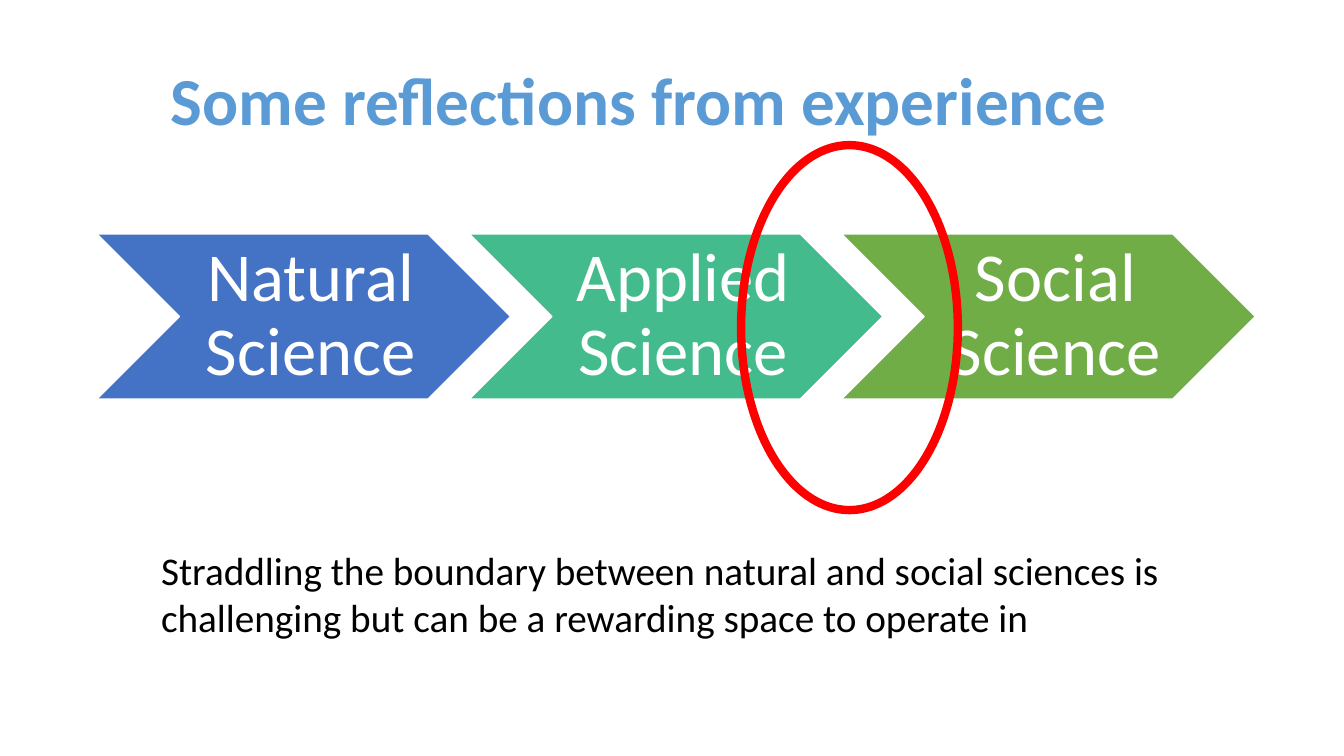
import pptx
import pptx.dml.color
import pptx.enum.shapes
import pptx.enum.text
import pptx.util

Inches = pptx.util.Inches
Pt = pptx.util.Pt
SHAPE = pptx.enum.shapes.MSO_SHAPE
ANCHOR = pptx.enum.text.MSO_ANCHOR
ALIGN = pptx.enum.text.PP_ALIGN

SCIENCES = [
    ("Natural Science", "4472C4"),
    ("Applied Science", "43BB8D"),
    ("Social Science", "70AD47"),
]


def color(value):
    return pptx.dml.color.RGBColor.from_string(value)


def add_text(slide, box, text, size, fill, bold=False, align=ALIGN.LEFT,
             anchor=ANCHOR.TOP, spacing=1.0, insets=(0.1, 0.05, 0.1, 0.05)):
    frame = slide.shapes.add_textbox(*map(Inches, box)).text_frame
    frame.word_wrap = True
    frame.vertical_anchor = anchor
    (frame.margin_left, frame.margin_top,
     frame.margin_right, frame.margin_bottom) = map(Inches, insets)
    frame.text = text
    paragraph = frame.paragraphs[0]
    paragraph.alignment = align
    paragraph.line_spacing = spacing
    font = paragraph.runs[0].font
    font.name = "Calibri"
    font.size = Pt(size)
    font.bold = bold
    font.color.rgb = color(fill)


def add_outlined(slide, kind, box, line, width, fill=None):
    outlined = slide.shapes.add_shape(kind, *map(Inches, box))
    outlined.shadow.inherit = False
    if fill:
        outlined.fill.solid()
        outlined.fill.fore_color.rgb = color(fill)
    else:
        outlined.fill.background()
    outlined.line.color.rgb = color(line)
    outlined.line.width = Pt(width)


def add_title(slide, box):
    add_text(slide, box, "Some reflections from experience", 48, "5B9BD5",
             bold=True, align=ALIGN.CENTER, anchor=ANCHOR.BOTTOM, spacing=0.9)


def add_science_chain(slide, box):
    left, top, width, height = box
    # Neighbouring chevrons overlap by a tenth of their width
    chevron_width = width / (1 + 0.9 * (len(SCIENCES) - 1))
    for index, (science, fill) in enumerate(SCIENCES):
        x = left + index * 0.9 * chevron_width
        add_outlined(slide, SHAPE.CHEVRON, (x, top, chevron_width, height),
                     "FFFFFF", 1, fill)
        # The label sits between the notch and the point
        label_box = (x + height / 2, top, chevron_width - height, height)
        add_text(slide, label_box, science, 49, "FFFFFF", align=ALIGN.CENTER,
                 anchor=ANCHOR.MIDDLE, spacing=0.9,
                 insets=(0.21, 0.07, 0.07, 0.07))


def add_boundary_ring(slide, box):
    add_outlined(slide, SHAPE.OVAL, box, "FF0000", 6)


def add_conclusion(slide, box):
    add_text(slide, box,
             "Straddling the boundary between natural and social sciences is "
             "challenging but can be a rewarding space to operate in",
             28, "000000")


def main():
    presentation = pptx.Presentation()
    presentation.slide_width = Inches(13.33)
    presentation.slide_height = Inches(7.5)
    slide = presentation.slides.add_slide(presentation.slide_layouts[6])

    add_title(slide, (0, 0.39, 12.68, 1.05))
    add_science_chain(slide, (0.96, 2.32, 11.49, 1.64))
    add_boundary_ring(slide, (7.35, 1.44, 2.15, 3.62))
    add_conclusion(slide, (1.5, 5.37, 10.96, 1.04))

    presentation.save("out.pptx")


if __name__ == "__main__":
    main()
